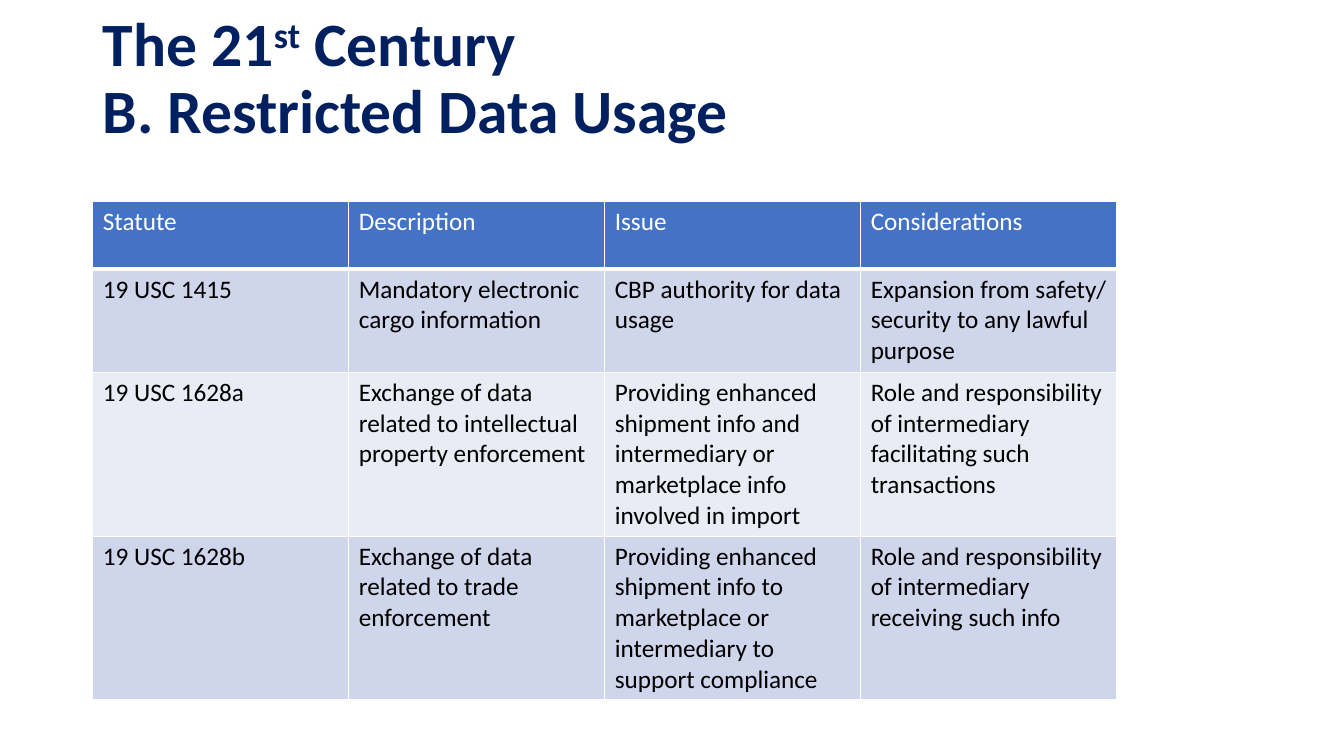
from pptx import Presentation
from pptx.dml.color import RGBColor
from pptx.enum.text import MSO_ANCHOR, MSO_AUTO_SIZE, PP_ALIGN
from pptx.oxml import parse_xml
from pptx.oxml.ns import nsdecls
from pptx.util import Cm, Pt

COLORS = {
    "title": "002060",
    "header": "4472C4",
    "band_dark": "CFD5EA",
    "band_light": "E9EBF5",
    "white": "FFFFFF",
    "black": "000000",
}
STATUTES = [
    ["Statute", "Description", "Issue", "Considerations"],
    ["19 USC 1415", "Mandatory electronic cargo information",
     "CBP authority for data usage",
     "Expansion from safety/ security to any lawful purpose"],
    ["19 USC 1628a",
     "Exchange of data related to intellectual property enforcement",
     "Providing enhanced shipment info and intermediary or marketplace info "
     "involved in import",
     "Role and responsibility of intermediary facilitating such transactions"],
    ["19 USC 1628b", "Exchange of data related to trade enforcement",
     "Providing enhanced shipment info to marketplace or intermediary to "
     "support compliance",
     "Role and responsibility of intermediary receiving such info"],
]
ROW_HEIGHTS = [1.7, 2.6, 4.12, 4.12]
COLUMN_WIDTH = 6.45
LEFT = 2.34


class SlideBuilder:
    def __init__(self, page, font_name="Calibri"):
        self.page = page
        self.font_name = font_name

    def style(self, paragraph, size, color, bold=False):
        paragraph.alignment = PP_ALIGN.LEFT
        font = paragraph.font
        font.name, font.size, font.bold = self.font_name, Pt(size), bold
        font.color.rgb = RGBColor.from_string(COLORS[color])

    def title(self, left, top, width, height):
        box = self.page.shapes.title
        box.left, box.top = Cm(left), Cm(top)
        box.width, box.height = Cm(width), Cm(height)
        frame = box.text_frame
        frame.word_wrap = True
        frame.auto_size = MSO_AUTO_SIZE.NONE
        frame.vertical_anchor = MSO_ANCHOR.MIDDLE
        paragraph = frame.paragraphs[0]
        paragraph.line_spacing = 0.9
        self.style(paragraph, 44, "title", bold=True)
        paragraph.add_run().text = "The 21"
        ordinal = paragraph.add_run()
        ordinal.text = "st"
        ordinal.font._element.set("baseline", "30000")
        paragraph.add_run().text = " Century"
        paragraph.add_line_break()
        paragraph.add_run().text = "B. Restricted Data Usage"

    def borders(self, cell, bottom_width):
        properties = cell._tc.get_or_add_tcPr()
        for side, width in zip("LRTB", (1, 1, 1, bottom_width)):
            properties.append(parse_xml(
                f'<a:ln{side} {nsdecls("a")} w="{Pt(width)}"><a:solidFill>'
                f'<a:srgbClr val="{COLORS["white"]}"/></a:solidFill></a:ln{side}>'))

    def cell(self, cell, text, fill, color, bottom_width):
        cell.text = text
        self.style(cell.text_frame.paragraphs[0], 18, color)
        self.borders(cell, bottom_width)
        cell.fill.solid()
        cell.fill.fore_color.rgb = RGBColor.from_string(COLORS[fill])

    def table(self, rows, left, top, column_width, row_heights):
        columns = len(rows[0])
        table = self.page.shapes.add_table(
            len(rows), columns, Cm(left), Cm(top),
            Cm(column_width * columns), Cm(sum(row_heights))).table
        for column in table.columns:
            column.width = Cm(column_width)
        for r, (texts, height) in enumerate(zip(rows, row_heights)):
            table.rows[r].height = Cm(height)
            if r == 0:
                look = ("header", "white", 3)
            else:
                look = ("band_dark" if r % 2 else "band_light", "black", 1)
            for c, text in enumerate(texts):
                self.cell(table.cell(r, c), text, *look)


def main():
    deck = Presentation()
    deck.slide_width, deck.slide_height = Cm(33.87), Cm(19.05)
    builder = SlideBuilder(deck.slides.add_slide(deck.slide_layouts[5]))
    builder.title(LEFT, 0.18, 29.21, 3.68)
    builder.table(STATUTES, LEFT, 5.08, COLUMN_WIDTH, ROW_HEIGHTS)
    deck.save("out.pptx")


if __name__ == "__main__":
    main()
